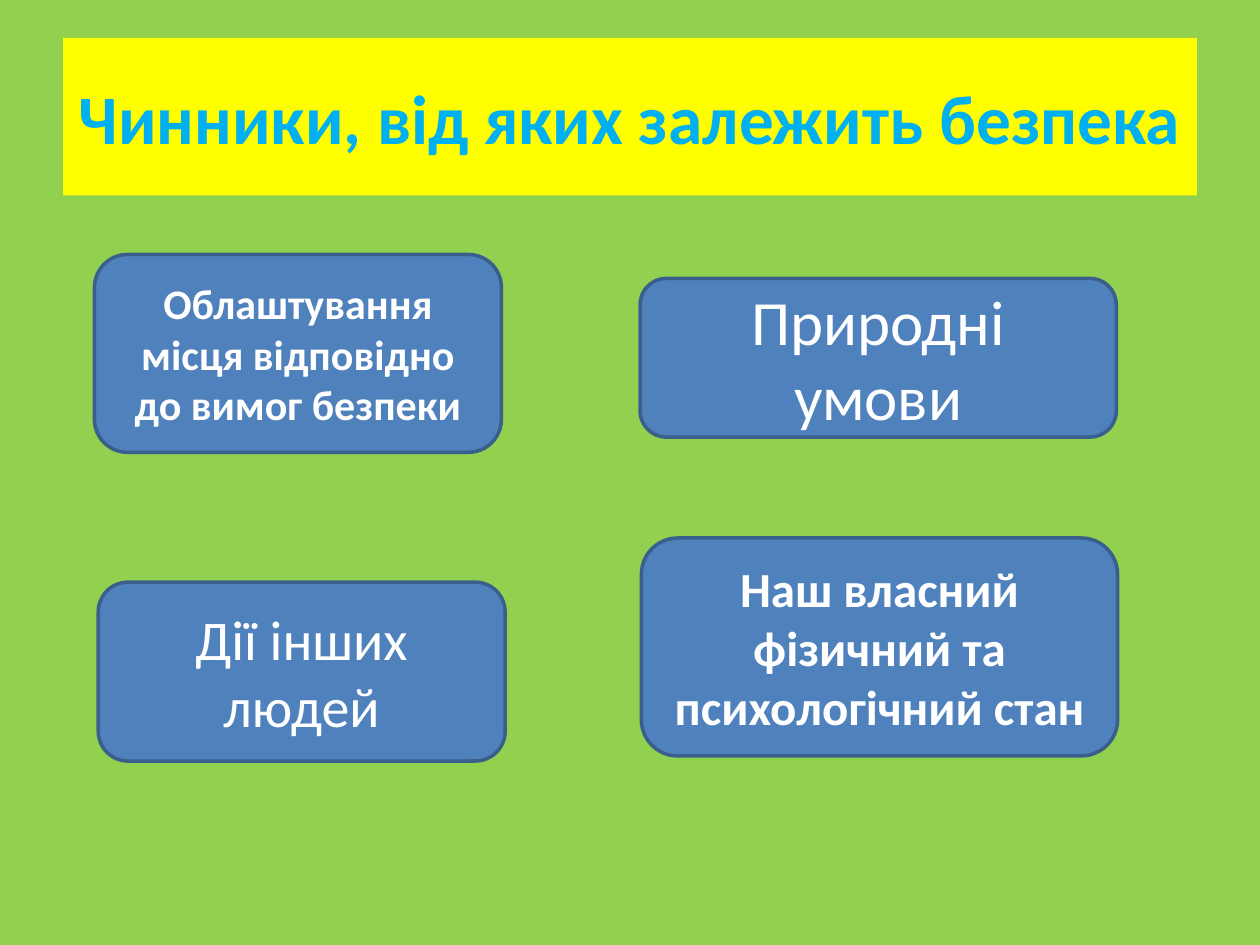
from typing import NamedTuple

from pptx import Presentation
from pptx.dml.color import RGBColor
from pptx.enum import shapes, text
from pptx.util import Inches, Pt


class Card(NamedTuple):
    label: str
    left: float
    top: float
    width: float
    height: float
    size: float
    bold: bool


CARDS = [
    Card("Облаштування місця відповідно до вимог безпеки",
         0.75, 2.02, 3.23, 1.57, 24, True),
    Card("Природні умови", 5.08, 2.21, 3.78, 1.26, 36, False),
    Card("Дії інших людей", 0.78, 4.62, 3.23, 1.42, 32, False),
    Card("Наш власний фізичний та психологічний стан",
         5.09, 4.27, 3.78, 1.73, 28, True),
]


def paint(fill, color: str) -> None:
    fill.solid()
    fill.fore_color.rgb = RGBColor.from_string(color)


def write(shape, label: str, size: float, color: str, bold: bool) -> None:
    """Set centred text in one format."""
    frame = shape.text_frame
    frame.text = label
    frame.word_wrap = True
    frame.vertical_anchor = text.MSO_ANCHOR.MIDDLE
    line = frame.paragraphs[0]
    line.alignment = text.PP_ALIGN.CENTER
    font = line.runs[0].font
    font.name = "Calibri"
    font.size = Pt(size)
    font.bold = bold
    paint(font.fill, color)


def draw_card(slide, card: Card) -> None:
    box = slide.shapes.add_shape(
        shapes.MSO_SHAPE.ROUNDED_RECTANGLE,
        Inches(card.left), Inches(card.top),
        Inches(card.width), Inches(card.height))
    box.shadow.inherit = False
    paint(box.fill, "4F81BD")
    paint(box.line.fill, "3A5F8C")
    box.line.width = Pt(2)
    write(box, card.label, card.size, "FFFFFF", card.bold)
    box.text_frame.margin_left = box.text_frame.margin_right = Inches(0.15)


def draw_title(slide) -> None:
    title = slide.shapes.title
    title.left, title.top = Inches(0.5), Inches(0.3)
    title.width, title.height = Inches(9), Inches(1.25)
    paint(title.fill, "FFFF00")
    write(title, "Чинники, від яких залежить безпека", 39.6, "00B0F0", True)


def main() -> None:
    deck = Presentation()
    deck.slide_width, deck.slide_height = Inches(10), Inches(7.5)
    slide = deck.slides.add_slide(deck.slide_layouts.get_by_name("Title Only"))
    paint(slide.background.fill, "92D050")
    draw_title(slide)
    for card in CARDS:
        draw_card(slide, card)
    deck.save("out.pptx")


if __name__ == "__main__":
    main()
